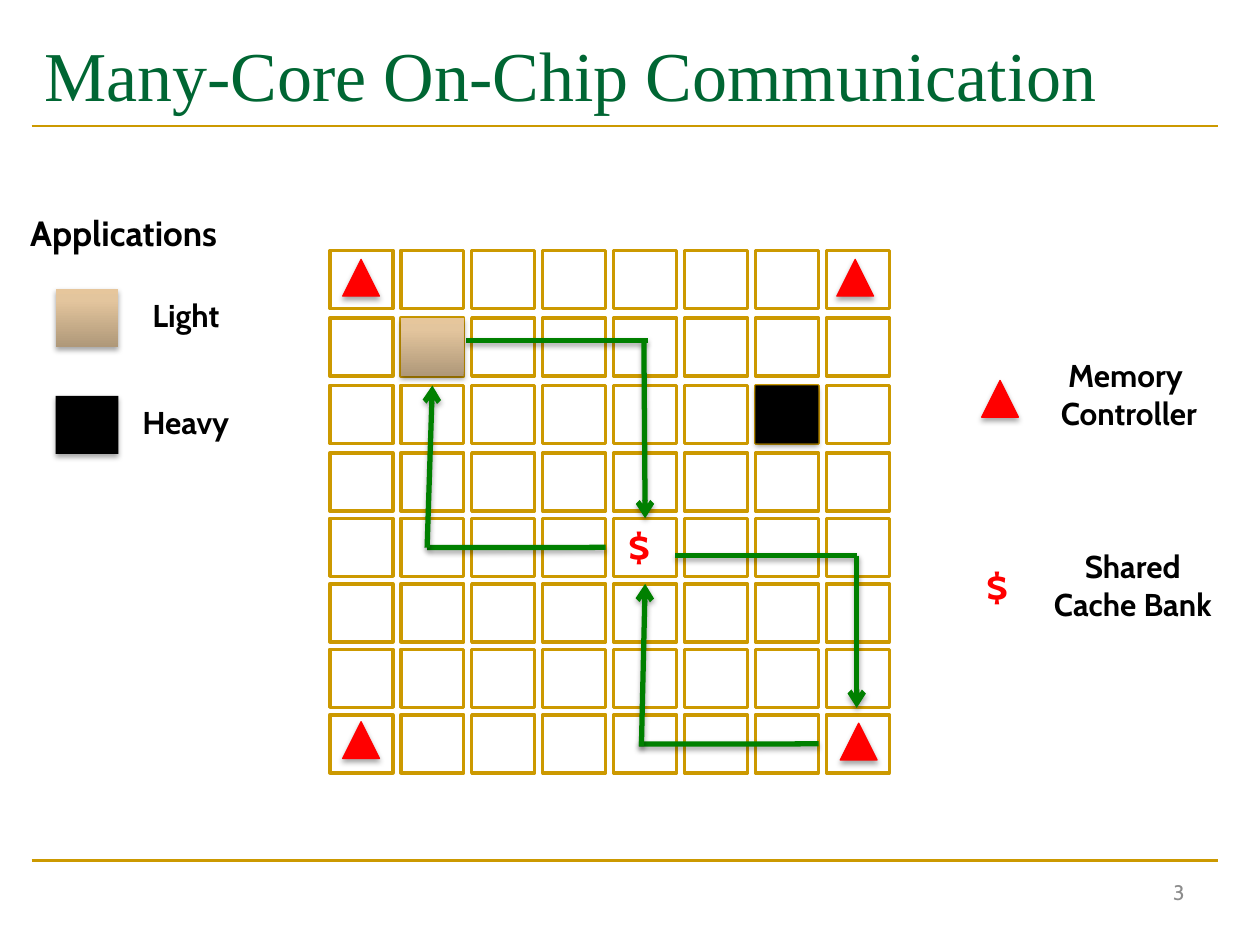
from copy import deepcopy
from dataclasses import dataclass
from itertools import product
from typing import Optional

from lxml.etree import SubElement
from pptx import Presentation
from pptx.dml.color import RGBColor
from pptx.enum.shapes import MSO_CONNECTOR, MSO_SHAPE
from pptx.enum.text import MSO_ANCHOR, MSO_AUTO_SIZE, PP_ALIGN
from pptx.oxml.ns import qn
from pptx.util import Cm, Pt


@dataclass(frozen=True)
class Theme:
    title_font: str = "Times New Roman"
    body_font: str = "Cabin"
    title: str = "006633"
    gold: str = "CC9900"
    red: str = "FF0000"
    green: str = "008000"
    black: str = "000000"
    white: str = "FFFFFF"
    grey: str = "8C8C8C"
    tan: tuple = ((0, "AF9879"), (0.8, "E3C59D"), (1, "E6C69C"))
    title_size: int = 40
    symbol_size: int = 24
    heading_size: int = 20
    label_size: int = 18
    number_size: int = 12


THEME = Theme()


@dataclass(frozen=True)
class Label:
    lines: tuple
    box: tuple  # left, top, width, height in cm
    size: int
    color: str = THEME.black
    font: str = THEME.body_font
    bold: bool = True
    align: PP_ALIGN = PP_ALIGN.CENTER
    fitted: bool = True


@dataclass(frozen=True)
class Joint:
    """A side of the core at (column, row): 0 top, 1 left, 2 bottom, 3 right."""
    column: int
    row: int
    side: int


@dataclass(frozen=True)
class Hop:
    start: tuple
    end: tuple
    arrow: bool = False
    leaves: Optional[Joint] = None
    reaches: Optional[Joint] = None


GRID_SIZE = 8
CORE_WIDTH, CORE_HEIGHT = 1.27, 1.17
TRIANGLE_SIDE = 0.74

LABELS = (
    Label(("Many-Core On-Chip Communication",), (0.64, 0.43, 23.92, 2.11), THEME.title_size,
          THEME.title, THEME.title_font, False, PP_ALIGN.LEFT, False),
    Label(("3",), (18.21, 17.35, 5.92, 1.27), THEME.number_size,
          THEME.grey, bold=False, align=PP_ALIGN.RIGHT, fitted=False),
    Label(("Applications",), (0.36, 4.14, 4.9, 1.11), THEME.heading_size, align=PP_ALIGN.LEFT),
    Label(("Light",), (2.67, 5.84, 2.16, 1.02), THEME.label_size),
    Label(("Heavy",), (2.49, 8, 2.51, 1.02), THEME.label_size),
    Label(("Memory ", "Controller"), (20.88, 7.06, 3.76, 1.8), THEME.label_size),
    Label(("Shared", "Cache Bank"), (20.7, 10.9, 4.27, 1.8), THEME.label_size),
    Label(("$",), (19.63, 11.2, 1.07, 1.27), THEME.symbol_size, THEME.red, align=PP_ALIGN.LEFT),
    Label(("$",), (12.42, 10.39, 1.07, 1.27), THEME.symbol_size, THEME.red, align=PP_ALIGN.LEFT),
)

MEMORY_CONTROLLERS = ((6.91, 5.23), (16.87, 5.23), (6.91, 14.55), (16.94, 14.58), (19.79, 7.67))

HOPS = (
    # light core to cache bank, and back
    Hop((9.4, 6.86), (13.06, 6.86)),
    Hop((12.98, 6.86), (12.98, 10.46), True, reaches=Joint(4, 4, 0)),
    Hop((12.22, 11.04), (8.61, 11.04), leaves=Joint(3, 4, 3)),
    Hop((8.61, 11.04), (8.66, 7.77), True, reaches=Joint(1, 2, 0)),
    # cache bank to memory controller, and back
    Hop((13.61, 11.2), (17.27, 11.2)),
    Hop((17.27, 11.2), (17.27, 14.27), True),
    Hop((16.43, 15), (12.88, 15), leaves=Joint(6, 7, 3)),
    Hop((12.93, 15.04), (12.98, 11.79), True, reaches=Joint(4, 5, 0)),
)


def rgb(color: str) -> RGBColor:
    return RGBColor.from_string(color)


def core_corner(column: int, row: int) -> tuple:
    """Left and top of a core; the lower rows sit slightly closer together."""
    return 6.65 + 1.43 * column, 5.05 + 1.36 * min(row, 3) + 1.32 * max(row - 3, 0)


def add_soft_shadow(effects) -> None:
    shadow = SubElement(effects, qn("a:outerShdw"), blurRad=str(Pt(3.1)), dist=str(Pt(1.8)),
                        dir="5400000", rotWithShape="0")
    tint = SubElement(shadow, qn("a:srgbClr"), val=THEME.black)
    SubElement(tint, qn("a:alpha"), val="35000")


def add_block(slide, kind: MSO_SHAPE, corner: tuple, width: float, height: float,
              fill: str, line: Optional[str] = None, line_width: float = 0.75,
              shadow: bool = True):
    left, top = corner
    block = slide.shapes.add_shape(kind, Cm(left), Cm(top), Cm(width), Cm(height))
    block.shadow.inherit = False
    block.fill.solid()
    block.fill.fore_color.rgb = rgb(fill)
    if line:
        block.line.color.rgb = rgb(line)
        block.line.width = Pt(line_width)
    else:
        block.line.fill.background()
    if shadow:
        add_soft_shadow(block.element.spPr.find(qn("a:effectLst")))
    return block


def add_application(slide, corner: tuple, light: bool) -> None:
    application = add_block(slide, MSO_SHAPE.RECTANGLE, corner, CORE_WIDTH, CORE_HEIGHT,
                            THEME.black)
    if not light:
        return
    fill = application.fill
    fill.gradient()
    fill.gradient_angle = 90
    stop_list = application.element.spPr.find(".//" + qn("a:gsLst"))
    stop_list.append(deepcopy(stop_list[-1]))
    for stop, (position, color) in zip(fill.gradient_stops, THEME.tan):
        stop.position = position
        stop.color.rgb = rgb(color)


def add_line(slide, start: tuple, end: tuple, color: str, width: float):
    """Draw a straight line; returns it with its empty effect list."""
    line = slide.shapes.add_connector(MSO_CONNECTOR.STRAIGHT, *map(Cm, start + end))
    line.line.color.rgb = rgb(color)
    line.line.width = Pt(width)
    return line, SubElement(line.element.spPr, qn("a:effectLst"))


def add_hop(slide, hop: Hop, cores: dict) -> None:
    wire, effects = add_line(slide, hop.start, hop.end, THEME.green, 3)
    add_soft_shadow(effects)
    if hop.arrow:
        SubElement(wire.element.spPr.find(qn("a:ln")), qn("a:tailEnd"), type="arrow")
    for joint, connect in ((hop.leaves, wire.begin_connect), (hop.reaches, wire.end_connect)):
        if joint:
            connect(cores[joint.column, joint.row], joint.side)


def add_label(slide, label: Label) -> None:
    frame = slide.shapes.add_textbox(*map(Cm, label.box)).text_frame
    frame.word_wrap = not label.fitted
    frame.auto_size = MSO_AUTO_SIZE.SHAPE_TO_FIT_TEXT if label.fitted else MSO_AUTO_SIZE.NONE
    frame.vertical_anchor = MSO_ANCHOR.TOP if label.fitted else MSO_ANCHOR.MIDDLE
    for index, line in enumerate(label.lines):
        paragraph = frame.add_paragraph() if index else frame.paragraphs[0]
        paragraph.alignment = label.align
        run = paragraph.add_run()
        run.text = line
        run.font.name = label.font
        run.font.size = Pt(label.size)
        run.font.bold = label.bold
        run.font.color.rgb = rgb(label.color)


def main() -> None:
    deck = Presentation()
    deck.slide_width, deck.slide_height = Cm(25.4), Cm(19.05)
    slide = deck.slides.add_slide(deck.slide_layouts[6])

    for rule_top in (2.54, 17.35):
        add_line(slide, (0.64, rule_top), (24.56, rule_top), THEME.gold, 1.5)
    cores = {
        (column, row): add_block(slide, MSO_SHAPE.RECTANGLE, core_corner(column, row),
                                 CORE_WIDTH, CORE_HEIGHT, THEME.white, THEME.gold, 2, False)
        for row, column in product(range(GRID_SIZE), repeat=2)
    }
    for corner in MEMORY_CONTROLLERS:
        add_block(slide, MSO_SHAPE.ISOSCELES_TRIANGLE, corner, TRIANGLE_SIDE, TRIANGLE_SIDE,
                  THEME.red, THEME.red)
    for hop in HOPS:
        add_hop(slide, hop, cores)
    for corner, light in ((core_corner(6, 2), False), (core_corner(1, 1), True),
                          ((1.12, 5.82), True), ((1.12, 7.98), False)):
        add_application(slide, corner, light)
    for label in LABELS:
        add_label(slide, label)
    deck.save("out.pptx")


if __name__ == "__main__":
    main()
